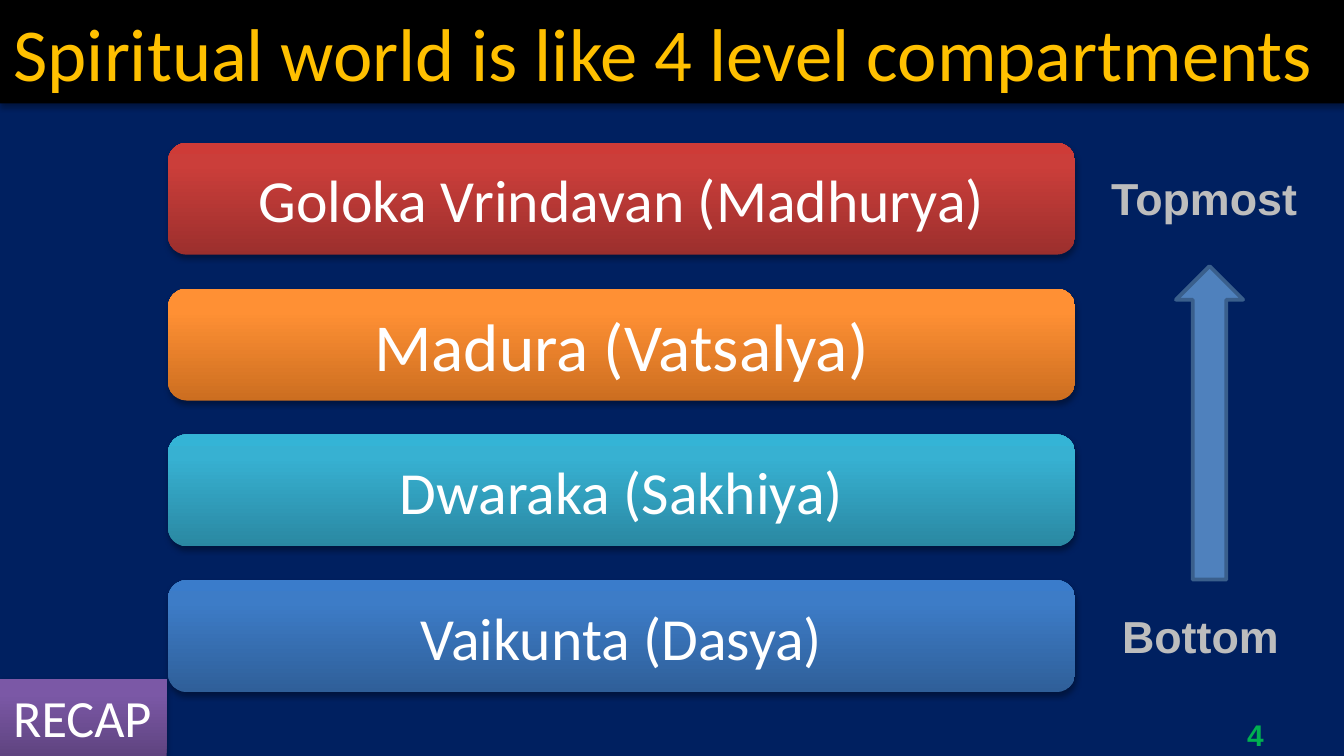
from lxml.etree import SubElement
from pptx import Presentation
from pptx.dml.color import RGBColor
from pptx.enum.shapes import MSO_SHAPE as SHAPE
from pptx.enum.text import MSO_ANCHOR as ANCHOR, MSO_AUTO_SIZE as AUTO, PP_ALIGN as ALIGN
from pptx.oxml.ns import qn
from pptx.util import Inches, Pt

COLORS = {
    "navy": "002060", "black": "000000", "gold": "FFC000", "white": "FFFFFF",
    "grey": "BDBDBD", "green": "00B050", "arrow": "4F81BD", "arrow_edge": "3A5F8C",
}
GRADIENTS = {
    "red": ("9C2F2D", "CB3E3A", "CE3B37"),
    "orange": ("CC6E20", "FF9034", "FF9136"),
    "teal": ("2A88A2", "37B1D2", "34B4D6"),
    "blue": ("2F5F99", "3D7CC7", "3A7CCB"),
    "purple": ("5F4480", "7B58A6", "7C57A8"),
}
COLUMNS, ROWS = 40, 22.5


def rgb(name):
    return RGBColor.from_string(COLORS[name])


class LevelSlide:
    def __init__(self, deck):
        self.slide = deck.slides.add_slide(deck.slide_layouts[5])
        self.column = deck.slide_width / COLUMNS
        self.row = deck.slide_height / ROWS
        background = self.slide.background.fill
        background.solid()
        background.fore_color.rgb = rgb("navy")

    def box(self, left, top, width, height):
        return (round(left * self.column), round(top * self.row),
                round(width * self.column), round(height * self.row))

    def set_text(self, shape, text, size, color, font="Calibri", bold=False,
                 align=ALIGN.LEFT, anchor=ANCHOR.TOP, wrap=True):
        frame = shape.text_frame
        frame.text = text
        frame.word_wrap = wrap
        frame.auto_size = AUTO.NONE
        frame.vertical_anchor = anchor
        line = frame.paragraphs[0]
        line.alignment = align
        line.font.name, line.font.size, line.font.bold = font, Pt(size), bold
        line.font.color.rgb = rgb(color)

    def cast_shadow(self, shape):
        shape.shadow.inherit = False
        effects = shape._element.spPr.find(qn("a:effectLst"))
        shadow = SubElement(effects, qn("a:outerShdw"), blurRad="40000",
                            dist="23000", dir="5400000", rotWithShape="0")
        tint = SubElement(shadow, qn("a:srgbClr"), val=COLORS["black"])
        SubElement(tint, qn("a:alpha"), val="35000")

    def title(self, text, place):
        banner = self.slide.shapes.title
        banner.left, banner.top, banner.width, banner.height = self.box(*place)
        banner.fill.solid()
        banner.fill.fore_color.rgb = rgb("black")
        self.cast_shadow(banner)
        self.set_text(banner, text, 40, "gold")

    def panel(self, kind, place, gradient, text, size, **layout):
        panel = self.slide.shapes.add_shape(kind, *self.box(*place))
        panel.fill.gradient()
        gradient_fill = panel._element.spPr.find(qn("a:gradFill"))
        gradient_fill.find(qn("a:lin")).set("ang", "16200000")
        stops = gradient_fill.find(qn("a:gsLst"))
        for stop in list(stops):
            stops.remove(stop)
        for share, color in zip((0, 80, 100), GRADIENTS[gradient]):
            stop = SubElement(stops, qn("a:gs"), pos=str(share * 1000))
            SubElement(stop, qn("a:srgbClr"), val=color)
        panel.line.fill.background()
        self.cast_shadow(panel)
        self.set_text(panel, text, size, "white", **layout)

    def label(self, text, place, size, color, **layout):
        label = self.slide.shapes.add_textbox(*self.box(*place))
        self.set_text(label, text, size, color, font="Arial", bold=True, **layout)

    def up_arrow(self, place):
        arrow = self.slide.shapes.add_shape(SHAPE.UP_ARROW, *self.box(*place))
        arrow.shadow.inherit = False
        arrow.fill.solid()
        arrow.fill.fore_color.rgb = rgb("arrow")
        arrow.line.color.rgb = rgb("arrow_edge")
        arrow.line.width = Pt(2)


def main():
    deck = Presentation()
    deck.slide_width, deck.slide_height = Inches(10), Inches(5.625)
    page = LevelSlide(deck)

    page.label("4", (28.67, 21.45, 9.33, 0.8), 16, "green",
               align=ALIGN.RIGHT, anchor=ANCHOR.MIDDLE)
    page.title("Spiritual world is like 4 level compartments", (0, 0, 40, 3.08))

    levels = [
        ("Goloka Vrindavan (Madhurya)", "red", 32),
        ("Madura (Vatsalya)", "orange", 36),
        ("Dwaraka (Sakhiya)", "teal", 32),
        ("Vaikunta (Dasya)", "blue", 32),
    ]
    first_row, pitch = 4.25, 4.34
    for level, (name, gradient, size) in enumerate(levels):
        page.panel(SHAPE.ROUNDED_RECTANGLE, (5, first_row + level * pitch, 27, 3.33),
                   gradient, name, size, align=ALIGN.CENTER, anchor=ANCHOR.MIDDLE)

    page.label("Topmost", (32.68, 4.88, 6.4, 2), 24, "grey", wrap=False)
    page.up_arrow((35, 7.92, 2, 9.33))
    page.label("Bottom", (33, 17.92, 5.52, 2), 24, "grey", wrap=False)
    page.panel(SHAPE.RECTANGLE, (0, 20.2, 4.96, 2.3), "purple", "RECAP", 28, wrap=False)

    deck.save("out.pptx")


if __name__ == "__main__":
    main()
